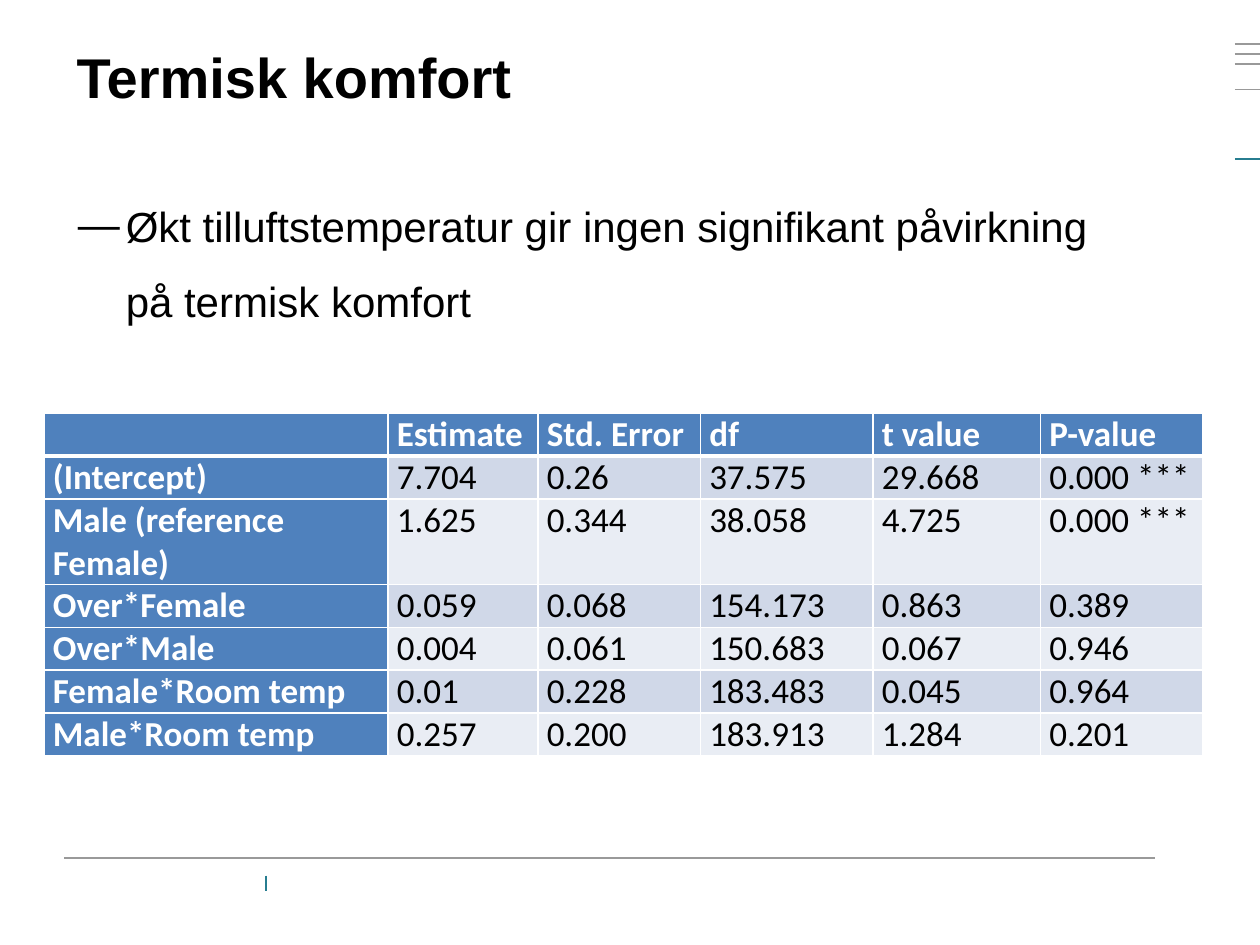
"""Build the slide on thermal comfort with its table of regression results."""
from lxml.etree import SubElement
from pptx import Presentation
from pptx.dml.color import RGBColor
from pptx.enum.shapes import MSO_CONNECTOR as Connector
from pptx.oxml.ns import qn
from pptx.util import Inches, Pt

TITLE = "Termisk komfort"
FINDING = "Økt tilluftstemperatur gir ingen signifikant påvirkning på termisk komfort"
RESULTS = [
    ("", "Estimate", "Std. Error", "df", "t value", "P-value"),
    ("(Intercept)", "7.704", "0.26", "37.575", "29.668", "0.000 ***"),
    ("Male (reference Female)", "1.625", "0.344", "38.058", "4.725", "0.000 ***"),
    ("Over*Female", "0.059", "0.068", "154.173", "0.863", "0.389"),
    ("Over*Male", "0.004", "0.061", "150.683", "0.067", "0.946"),
    ("Female*Room temp", "0.01", "0.228", "183.483", "0.045", "0.964"),
    ("Male*Room temp", "0.257", "0.200", "183.913", "1.284", "0.201"),
]
COLUMN_WIDTHS = [2.73, 1.19, 1.29, 1.37, 1.33, 1.29]
ROW_HEIGHT = 0.34
TWO_LINE_ROW = 2

GREY, TEAL, WHITE, BLACK = "999999", "277D90", "FFFFFF", "000000"
HEADING_FILL, BAND_FILLS = "4F81BD", ("E9EDF4", "D0D8E8")
MARGIN_TICKS = [(0.35, GREY), (0.43, GREY), (0.51, GREY), (0.71, GREY), (1.26, TEAL)]
RULES = [(0.51, 6.81, 9.17, 6.81, GREY), (2.11, 6.95, 2.11, 7.07, TEAL)]
RULES += [(9.8, y, 10, y, color) for y, color in MARGIN_TICKS]

TITLE_FORMAT = {"name": "Arial", "size": Pt(32), "bold": True}
FINDING_FORMAT = {"name": "Arial", "size": Pt(24), "bold": False}
HEADING_FORMAT = {"name": "Calibri", "size": Pt(20), "bold": True}
VALUE_FORMAT = {**HEADING_FORMAT, "bold": False}
FRAME_FORMAT = {"word_wrap": True, "margin_top": Inches(0.1)}
CELL_FORMAT = {
    "margin_left": Inches(0.07), "margin_right": Inches(0.07),
    "margin_top": 0, "margin_bottom": 0,
}


def rgb(color):
    return RGBColor.from_string(color)


def apply(target, values):
    for name, value in values.items():
        setattr(target, name, value)


def write(paragraph, words, font_format, color):
    run = paragraph.add_run()
    run.text = words
    apply(run.font, font_format)
    run.font.color.rgb = rgb(color)


def add_rule(slide, x1, y1, x2, y2, color):
    rule = slide.shapes.add_connector(Connector.STRAIGHT, *map(Inches, (x1, y1, x2, y2)))
    rule.line.color.rgb = rgb(color)
    rule.line.width = Pt(1)
    SubElement(rule.element.spPr, qn("a:effectLst"))


def add_words(slide, box, words, font_format):
    frame = slide.shapes.add_textbox(*map(Inches, box)).text_frame
    apply(frame, FRAME_FORMAT)
    write(frame.paragraphs[0], words, font_format, BLACK)
    return frame.paragraphs[0]


def add_borders(cell, row):
    widths = {"L": 1, "R": 1, "T": 3 if row == 1 else 1, "B": 3 if row == 0 else 1}
    properties = cell._tc.get_or_add_tcPr()
    for side, width in widths.items():
        border = SubElement(properties, qn(f"a:ln{side}"), w=str(Pt(width)))
        SubElement(SubElement(border, qn("a:solidFill")), qn("a:srgbClr"), val=WHITE)


def add_results(slide):
    heights = [ROW_HEIGHT * (2 if row == TWO_LINE_ROW else 1) for row in range(len(RESULTS))]
    box = map(Inches, (0.35, 3.28, sum(COLUMN_WIDTHS), sum(heights)))
    table = slide.shapes.add_table(len(RESULTS), len(COLUMN_WIDTHS), *box).table
    for column, width in zip(table.columns, COLUMN_WIDTHS):
        column.width = Inches(width)
    for r, (result, height) in enumerate(zip(RESULTS, heights)):
        table.rows[r].height = Inches(height)
        for c, words in enumerate(result):
            cell = table.cell(r, c)
            heading = r == 0 or c == 0
            apply(cell, CELL_FORMAT)
            add_borders(cell, r)
            cell.fill.solid()
            cell.fill.fore_color.rgb = rgb(HEADING_FILL if heading else BAND_FILLS[r % 2])
            if words:
                style = (HEADING_FORMAT, WHITE) if heading else (VALUE_FORMAT, BLACK)
                write(cell.text_frame.paragraphs[0], words, *style)


def add_finding(slide):
    finding = add_words(slide, (0.52, 1.29, 8.66, 1.97), FINDING, FINDING_FORMAT)
    finding.line_spacing = 1.5
    properties = finding._p.get_or_add_pPr()
    properties.set("marL", str(Inches(0.38)))
    properties.set("indent", str(Inches(-0.38)))
    SubElement(properties, qn("a:buFont"), typeface="Arial")
    SubElement(properties, qn("a:buChar"), char="—")


def main():
    deck = Presentation()
    apply(deck, {"slide_width": Inches(10), "slide_height": Inches(7.5)})
    slide = deck.slides.add_slide(deck.slide_layouts[6])
    for rule in RULES:
        add_rule(slide, *rule)
    add_words(slide, (0.51, 0.24, 8.66, 1.02), TITLE, TITLE_FORMAT)
    add_results(slide)
    add_finding(slide)
    deck.save("out.pptx")


if __name__ == "__main__":
    main()
